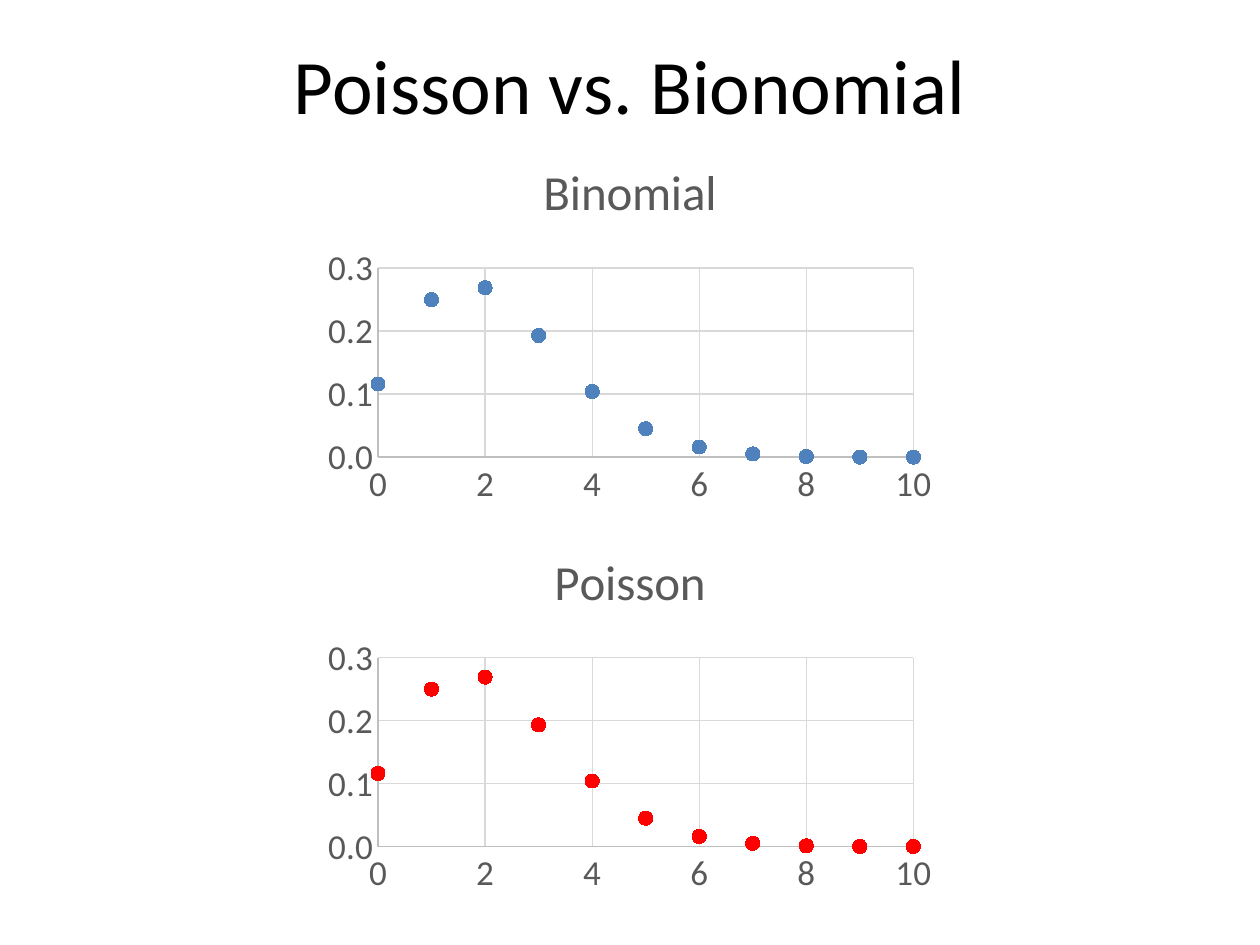
import pptx
import pptx.chart.data
import pptx.dml.color
import pptx.enum.chart
import pptx.enum.text
import pptx.oxml
import pptx.oxml.ns
import pptx.util
from pptx.util import Cm

PROBABILITIES = [0.116, 0.25, 0.269, 0.193, 0.104, 0.045, 0.016, 0.005, 0.001, 0, 0]
PLOT_FRAME = {"x": 0.1, "y": 0.35, "w": 0.85, "h": 0.5}


def colour(value):
    return pptx.dml.color.RGBColor.from_string(value)


class SlideBuilder:
    font_name = "Calibri"
    title_colour = "000000"
    label_colour = "595959"
    axis_colour = "BFBFBF"
    grid_colour = "D9D9D9"

    def __init__(self, page):
        self.page = page

    def style_font(self, font, size, value):
        font.name = self.font_name
        font.size = pptx.util.Pt(size)
        font.bold = False
        font.color.rgb = colour(value)

    def style_line(self, line, value):
        line.color.rgb = colour(value)
        line.width = pptx.util.Pt(0.75)

    def add_title(self, text, left, top, width, height):
        box = self.page.shapes.add_textbox(left, top, width, height)
        frame = box.text_frame
        frame.word_wrap = True
        frame.vertical_anchor = pptx.enum.text.MSO_ANCHOR.MIDDLE
        frame.text = text
        para = frame.paragraphs[0]
        para.alignment = pptx.enum.text.PP_ALIGN.CENTER
        self.style_font(para.runs[0].font, 44, self.title_colour)

    def style_axis(self, axis, maximum, step, number_format):
        axis.minimum_scale = 0
        axis.maximum_scale = maximum
        axis.major_unit = step
        axis.major_tick_mark = pptx.enum.chart.XL_TICK_MARK.NONE
        axis.minor_tick_mark = pptx.enum.chart.XL_TICK_MARK.NONE
        axis.has_major_gridlines = True
        self.style_line(axis.major_gridlines.format.line, self.grid_colour)
        self.style_line(axis.format.line, self.axis_colour)
        axis.tick_labels.number_format = number_format
        axis.tick_labels.number_format_is_linked = False
        self.style_font(axis.tick_labels.font, 20, self.label_colour)

    def place_plot(self, chart):
        plot_area = chart._chartSpace.chart.plotArea
        for layout in plot_area.findall(pptx.oxml.ns.qn("c:layout")):
            plot_area.remove(layout)
        modes = "".join(f'<c:{name}Mode val="edge"/>' for name in "xy")
        sizes = "".join(f'<c:{name} val="{share}"/>' for name, share in PLOT_FRAME.items())
        plot_area.insert(0, pptx.oxml.parse_xml(
            f'<c:layout {pptx.oxml.ns.nsdecls("c")}><c:manualLayout>'
            f'<c:layoutTarget val="inner"/>{modes}{sizes}'
            '</c:manualLayout></c:layout>'))

    def add_scatter(self, name, values, value, left, top, width, height):
        data = pptx.chart.data.XyChartData()
        points = data.add_series(name)
        for count, probability in enumerate(values):
            points.add_data_point(count, probability)
        chart = self.page.shapes.add_chart(
            pptx.enum.chart.XL_CHART_TYPE.XY_SCATTER, left, top, width, height, data).chart
        self.style_font(chart.font, 10, self.title_colour)
        chart.has_legend = False
        chart.has_title = True
        chart.chart_title.include_in_layout = False
        chart.chart_title.text_frame.text = name
        span = chart.chart_title.text_frame.paragraphs[0].runs[0]
        self.style_font(span.font, 28, self.label_colour)
        self.style_axis(chart.category_axis, 10, 2, "General")
        self.style_axis(chart.value_axis, 0.3, 0.1, "0.0")
        self.place_plot(chart)
        chart.plots[0].vary_by_categories = False
        series = chart.plots[0].series[0]
        series.smooth = False
        series.format.line.fill.background()
        marker = series.marker
        marker.style = pptx.enum.chart.XL_MARKER_STYLE.CIRCLE
        marker.size = 8
        marker.format.fill.solid()
        marker.format.fill.fore_color.rgb = colour(value)
        self.style_line(marker.format.line, value)


def main():
    deck = pptx.Presentation()
    deck.slide_width = Cm(25.4)
    deck.slide_height = Cm(19.05)
    builder = SlideBuilder(deck.slides.add_slide(deck.slide_layouts[6]))
    builder.add_title("Poisson vs. Bionomial", Cm(1.27), Cm(0.1), Cm(22.86), Cm(3.18))
    for name, value, top in (("Binomial", "4F81BD", 2.74), ("Poisson", "FF0000", 10.59)):
        builder.add_scatter(name, PROBABILITIES, value, Cm(6.35), Cm(top), Cm(12.7), Cm(7.62))
    deck.save("out.pptx")


if __name__ == "__main__":
    main()
